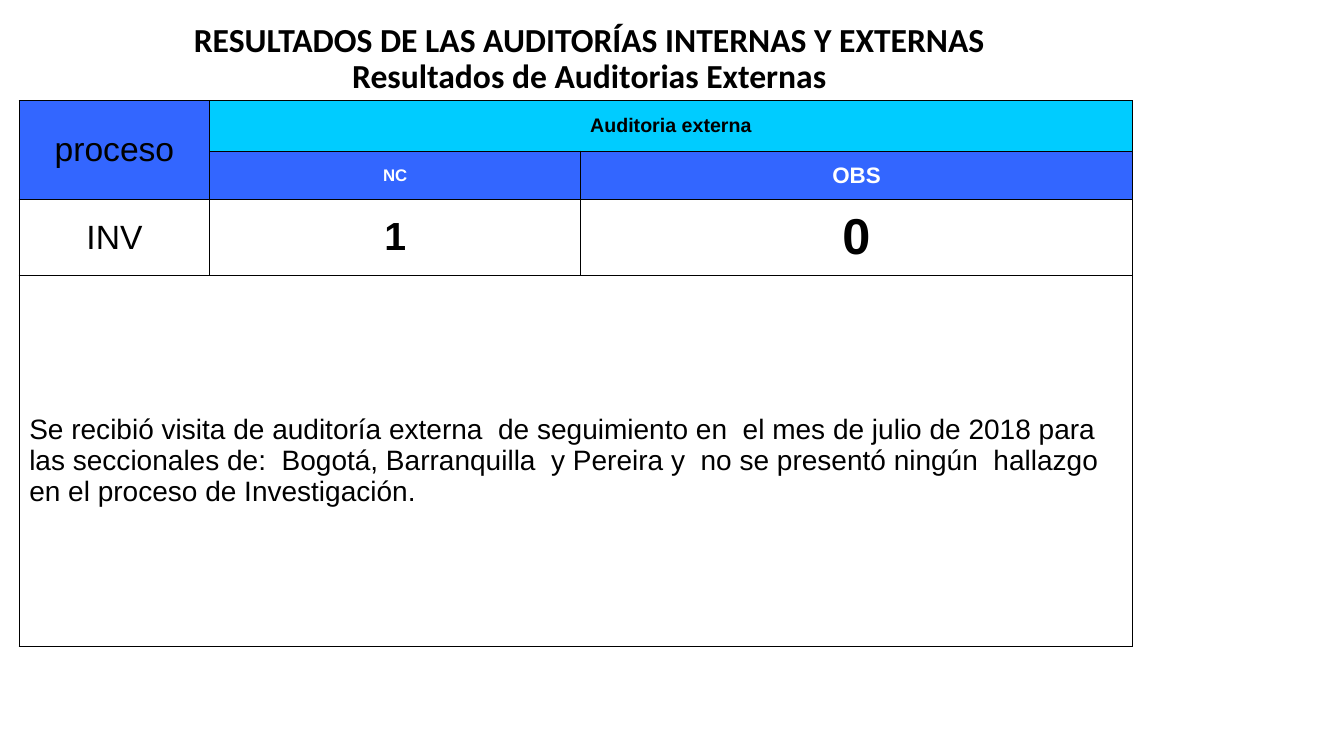
from dataclasses import dataclass

from lxml import etree
from pptx import Presentation
from pptx.dml.color import RGBColor
from pptx.enum.text import MSO_ANCHOR, PP_ALIGN
from pptx.oxml.ns import qn
from pptx.util import Inches, Pt

BOTTOM, MIDDLE = MSO_ANCHOR.BOTTOM, MSO_ANCHOR.MIDDLE
CENTER, JUSTIFY = PP_ALIGN.CENTER, PP_ALIGN.JUSTIFY


@dataclass(frozen=True)
class Theme:
    black: RGBColor = RGBColor(0x00, 0x00, 0x00)
    white: RGBColor = RGBColor(0xFF, 0xFF, 0xFF)
    blue: RGBColor = RGBColor(0x33, 0x66, 0xFF)
    cyan: RGBColor = RGBColor(0x00, 0xCC, 0xFF)
    title_font: str = "Calibri"
    table_font: str = "Arial"
    title: int = 24
    process: int = 24
    group: int = 14
    nc_header: int = 12
    obs_header: int = 16
    nc_value: int = 28
    obs_value: int = 36
    remark: int = 20


THEME = Theme()


def format_font(paragraph, name, size, bold, color):
    values = {"name": name, "size": Pt(size), "bold": bold}
    for attribute, value in values.items():
        setattr(paragraph.font, attribute, value)
    paragraph.font.color.rgb = color


def add_borders(cell):
    """Draw thin black lines on all four sides, placed before the cell fill."""
    properties = cell._tc.get_or_add_tcPr()
    for position, side in enumerate(("a:lnL", "a:lnR", "a:lnT", "a:lnB")):
        line = etree.Element(qn(side), w=str(Pt(1)))
        fill = etree.SubElement(line, qn("a:solidFill"))
        etree.SubElement(fill, qn("a:srgbClr"), val=str(THEME.black))
        properties.insert(position, line)


presentation = Presentation()
presentation.slide_width = Inches(13.33)
presentation.slide_height = Inches(7.5)
slide = presentation.slides.add_slide(presentation.slide_layouts[5])

title = slide.shapes.title
title.left, title.top = Inches(0.59), Inches(-0.25)
title.width, title.height = Inches(10.51), Inches(1.25)
title.text_frame.text = (
    "RESULTADOS DE LAS AUDITORÍAS INTERNAS Y EXTERNAS\v"
    "Resultados de Auditorias Externas"
)
title.text_frame.word_wrap = True
title.text_frame.vertical_anchor = BOTTOM
heading = title.text_frame.paragraphs[0]
heading.alignment = CENTER
heading.line_spacing = 0.9
format_font(heading, THEME.title_font, THEME.title, True, THEME.black)

column_widths = [1.89, 3.68, 5.47]
row_heights = [0.5, 0.48, 0.75, 3.68]
table_shape = slide.shapes.add_table(
    len(row_heights), len(column_widths),
    Inches(0.19), Inches(1), Inches(sum(column_widths)), Inches(sum(row_heights)),
)
table = table_shape.table
table.first_row = table.horz_banding = False
for column, width in zip(table.columns, column_widths):
    column.width = Inches(width)
for row, height in zip(table.rows, row_heights):
    row.height = Inches(height)
for cell in table.iter_cells():
    cell.fill.background()
    add_borders(cell)

for first, last in [((0, 0), (1, 0)), ((0, 1), (0, 2)), ((3, 0), (3, 2))]:
    table.cell(*first).merge(table.cell(*last))

remark = (
    "Se recibió visita de auditoría externa  de seguimiento en  el mes de julio de 2018 para\n"
    "las seccionales de:  Bogotá, Barranquilla  y Pereira y  no se presentó ningún  hallazgo\n"
    "en el proceso de Investigación."
)
# Row, column, text, size, bold, text colour, fill, alignment
cells = [
    (0, 0, "proceso", THEME.process, False, THEME.black, THEME.blue, CENTER),
    (0, 1, "Auditoria externa", THEME.group, True, THEME.black, THEME.cyan, CENTER),
    (1, 1, "NC", THEME.nc_header, True, THEME.white, THEME.blue, CENTER),
    (1, 2, "OBS", THEME.obs_header, True, THEME.white, THEME.blue, CENTER),
    (2, 0, "INV", THEME.process, False, THEME.black, None, CENTER),
    (2, 1, "1", THEME.nc_value, True, THEME.black, None, CENTER),
    (2, 2, "0", THEME.obs_value, True, THEME.black, None, CENTER),
    (3, 0, remark, THEME.remark, False, THEME.black, None, JUSTIFY),
]
for row, column, text, size, bold, color, fill, alignment in cells:
    cell = table.cell(row, column)
    cell.text = text
    cell.vertical_anchor = MIDDLE
    if fill is not None:
        cell.fill.solid()
        cell.fill.fore_color.rgb = fill
    for paragraph in cell.text_frame.paragraphs:
        paragraph.alignment = alignment
        properties = paragraph._p.get_or_add_pPr()
        properties.set("marL", str(Inches(0.38)))
        properties.set("indent", str(Inches(-0.38)))
        format_font(paragraph, THEME.table_font, size, bold, color)

presentation.save("out.pptx")
